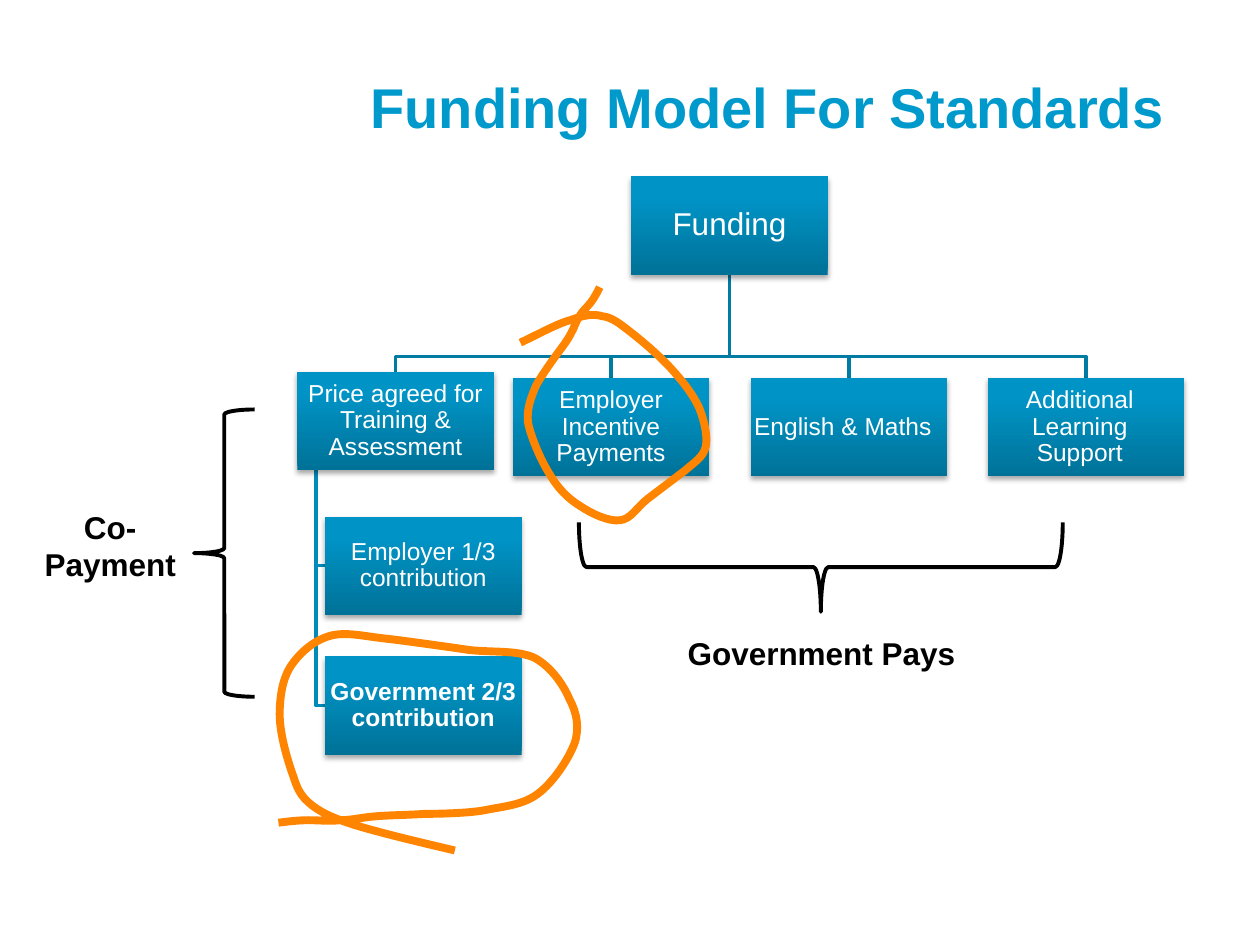
from copy import deepcopy
from dataclasses import dataclass

from lxml.etree import SubElement as Sub
from pptx import Presentation
from pptx.dml.color import RGBColor as Color
from pptx.enum.shapes import MSO_SHAPE as Kind
from pptx.enum.text import MSO_ANCHOR as Anchor, MSO_AUTO_SIZE as Fit, PP_ALIGN as Align
from pptx.oxml.ns import qn
from pptx.util import Inches, Pt

TITLE = Color(0x00, 0x99, 0xCC)
WHITE = Color(0xFF, 0xFF, 0xFF)
BLACK = Color(0x00, 0x00, 0x00)
TRUNK = Color(0x00, 0x7B, 0xA3)
TWIG = Color(0x00, 0x8B, 0xB9)
PEN = Color(0xFF, 0x85, 0x00)
SHADE = ((0, Color(0x00, 0x72, 0x98)), (0.8, Color(0x00, 0x94, 0xC6)), (1, Color(0x00, 0x95, 0xC7)))
WIDE, HIGH = 1.56, 0.78
HUB, BAR = 5.79, 2.83

Point = tuple[float, float]


@dataclass
class Node:
    text: str
    left: float
    top: float
    size: int = 14
    bold: bool = False
    inset: float = 0.01


@dataclass
class Label:
    lines: list[str]
    left: float
    top: float
    width: float
    height: float


@dataclass
class Brace:
    left: float
    top: float
    width: float
    height: float
    turn: int = 0


@dataclass
class Wire:
    points: list[Point]
    color: Color = TRUNK


ROOT = Node("Funding", 5.01, 1.4, 18)
PRICE = Node("Price agreed for Training & Assessment", 2.36, 2.95)
PAID = [
    Node("Employer Incentive Payments", 4.07, 3),
    Node("English & Maths", 5.96, 3, inset=0.11),
    Node("Additional Learning Support", 7.84, 3, inset=0.11),
]
SPLIT = [
    Node("Employer 1/3 contribution", 2.58, 4.1),
    Node("Government 2/3 contribution", 2.58, 5.21, bold=True),
]
LABELS = [
    Label(["Co-", "Payment"], 0.21, 3.98, 1.33, 0.71),
    Label(["Government Pays"], 4.73, 4.98, 3.58, 0.4),
]
BRACES = [Brace(1.54, 3.25, 0.48, 2.28), Brace(6.16, 2.58, 0.71, 3.84, 270)]
LOOPS = [
    [(3.61, 6.75), (3.31, 6.68), (3.02, 6.61), (2.82, 6.55), (2.63, 6.49), (2.53, 6.44), (2.45, 6.37),
     (2.36, 6.29), (2.35, 6.22), (2.31, 6.11), (2.27, 5.99), (2.22, 5.81), (2.22, 5.67),
     (2.22, 5.54), (2.24, 5.4), (2.3, 5.3), (2.37, 5.19), (2.48, 5.09), (2.61, 5.05),
     (2.74, 5.01), (2.88, 5.05), (3.07, 5.07), (3.25, 5.09), (3.73, 5.16), (3.73, 5.16),
     (3.93, 5.18), (4.1, 5.16), (4.24, 5.22), (4.37, 5.29), (4.47, 5.43), (4.52, 5.55),
     (4.58, 5.66), (4.6, 5.78), (4.56, 5.9), (4.51, 6.03), (4.39, 6.21), (4.27, 6.3),
     (4.15, 6.39), (4, 6.4), (3.85, 6.43), (3.7, 6.46), (3.37, 6.46), (3.37, 6.46),
     (3.22, 6.47), (3.08, 6.47), (2.97, 6.48), (2.86, 6.49), (2.79, 6.51), (2.7, 6.51),
     (2.62, 6.52), (2.53, 6.51), (2.45, 6.51), (2.37, 6.51), (2.29, 6.52), (2.21, 6.53)],
    [(4.13, 2.72), (4.28, 2.65), (4.42, 2.57), (4.53, 2.54), (4.64, 2.5), (4.71, 2.49), (4.78, 2.51),
     (4.86, 2.52), (4.92, 2.57), (5.01, 2.64), (5.1, 2.71), (5.24, 2.83), (5.33, 2.93),
     (5.42, 3.03), (5.5, 3.13), (5.55, 3.24), (5.59, 3.34), (5.62, 3.47), (5.6, 3.55),
     (5.58, 3.63), (5.51, 3.67), (5.43, 3.74), (5.35, 3.8), (5.14, 3.96), (5.14, 3.96),
     (5.05, 4.03), (5.01, 4.12), (4.92, 4.13), (4.83, 4.14), (4.7, 4.08), (4.61, 4.02),
     (4.51, 3.96), (4.43, 3.88), (4.36, 3.76), (4.29, 3.65), (4.21, 3.46), (4.19, 3.35),
     (4.18, 3.23), (4.22, 3.15), (4.25, 3.07), (4.29, 2.99), (4.4, 2.84), (4.4, 2.84),
     (4.45, 2.77), (4.5, 2.71), (4.53, 2.65), (4.56, 2.6), (4.57, 2.55), (4.6, 2.51),
     (4.62, 2.47), (4.66, 2.44), (4.69, 2.4), (4.72, 2.36), (4.74, 2.32), (4.76, 2.28)],
]


def write(para, text: str, size: int, color: Color, bold: bool, align=Align.CENTER) -> None:
    para.alignment = align
    run = para.add_run()
    run.text = text
    font = run.font
    font.name, font.size, font.bold = "Arial", Pt(size), bold
    font.color.rgb = color


def stroke(shape, color: Color, width: float) -> None:
    shape.shadow.inherit = False
    shape.fill.background()
    shape.line.color.rgb = color
    shape.line.width = Pt(width)


def trace(shapes, points: list[Point], color: Color, width: float):
    spots = [(Inches(x), Inches(y)) for x, y in points]
    pen = shapes.build_freeform(*spots[0])
    pen.add_line_segments(spots[1:], close=False)
    shape = pen.convert_to_shape()
    stroke(shape, color, width)
    return shape


def bend(shape) -> None:
    steps = list(shape._element.iter(qn("a:lnTo")))
    for i in range(0, len(steps), 3):
        curve = Sub(steps[i].getparent(), qn("a:cubicBezTo"))
        for step in steps[i:i + 3]:
            curve.append(step[0])
            step.getparent().remove(step)


def draw_node(shapes, node: Node) -> None:
    box = shapes.add_shape(Kind.RECTANGLE, Inches(node.left), Inches(node.top), Inches(WIDE), Inches(HIGH))
    box.line.fill.background()
    fill = box.fill
    fill.gradient()
    fill.gradient_angle = 90
    stops = next(box._element.iter(qn("a:gsLst")))
    stops.append(deepcopy(stops[1]))
    for stop, (place, color) in zip(fill.gradient_stops, SHADE):
        stop.position = place
        stop.color.rgb = color
    box.shadow.inherit = False
    glow = Sub(box._element.spPr.find(qn("a:effectLst")), qn("a:outerShdw"),
               blurRad=str(Pt(3.1)), dist=str(Pt(1.8)), dir="5400000", rotWithShape="0")
    Sub(Sub(glow, qn("a:srgbClr"), val=str(BLACK)), qn("a:alpha"), val="35000")
    frame = box.text_frame
    frame.word_wrap = True
    frame.vertical_anchor = Anchor.MIDDLE
    frame.margin_left = frame.margin_top = frame.margin_bottom = Inches(0.01)
    frame.margin_right = Inches(node.inset)
    para = frame.paragraphs[0]
    para.line_spacing = 0.9
    write(para, node.text, node.size, WHITE, node.bold)


def draw_label(shapes, label: Label) -> None:
    box = shapes.add_textbox(Inches(label.left), Inches(label.top), Inches(label.width), Inches(label.height))
    frame = box.text_frame
    frame.word_wrap = True
    for i, line in enumerate(label.lines):
        para = frame.add_paragraph() if i else frame.paragraphs[0]
        write(para, line, 18, BLACK, True)


def draw_brace(shapes, brace: Brace) -> None:
    shape = shapes.add_shape(Kind.LEFT_BRACE, Inches(brace.left), Inches(brace.top),
                             Inches(brace.width), Inches(brace.height))
    shape.rotation = brace.turn
    stroke(shape, BLACK, 2.25)


def main() -> None:
    deck = Presentation()
    deck.slide_width, deck.slide_height = Inches(10), Inches(7.5)
    slide = deck.slides.add_slide(deck.slide_layouts[5])
    shapes = slide.shapes
    title = shapes.title
    title.left, title.top, title.width, title.height = Inches(2.84), Inches(0.52), Inches(6.93), Inches(0.64)
    title.text_frame.auto_size = Fit.NONE
    write(title.text_frame.paragraphs[0], "Funding Model For Standards", 32, TITLE, True, Align.LEFT)

    wires = []
    for node in [*reversed(PAID), PRICE]:
        mid = node.left + WIDE / 2
        wires.append(Wire([(HUB, ROOT.top + HIGH), (HUB, BAR), (mid, BAR), (mid, node.top)]))
    for node in reversed(SPLIT):
        mid = node.top + HIGH / 2
        wires.append(Wire([(2.51, PRICE.top + HIGH), (2.51, mid), (node.left, mid)], TWIG))
    for wire in wires:
        trace(shapes, wire.points, wire.color, 2)
    for node in [ROOT, PRICE, *SPLIT, *PAID]:
        draw_node(shapes, node)
    for brace in BRACES:
        draw_brace(shapes, brace)
    for label in LABELS:
        draw_label(shapes, label)
    for loop in LOOPS:
        bend(trace(shapes, loop, PEN, 4.5))
    deck.save("out.pptx")


if __name__ == "__main__":
    main()
